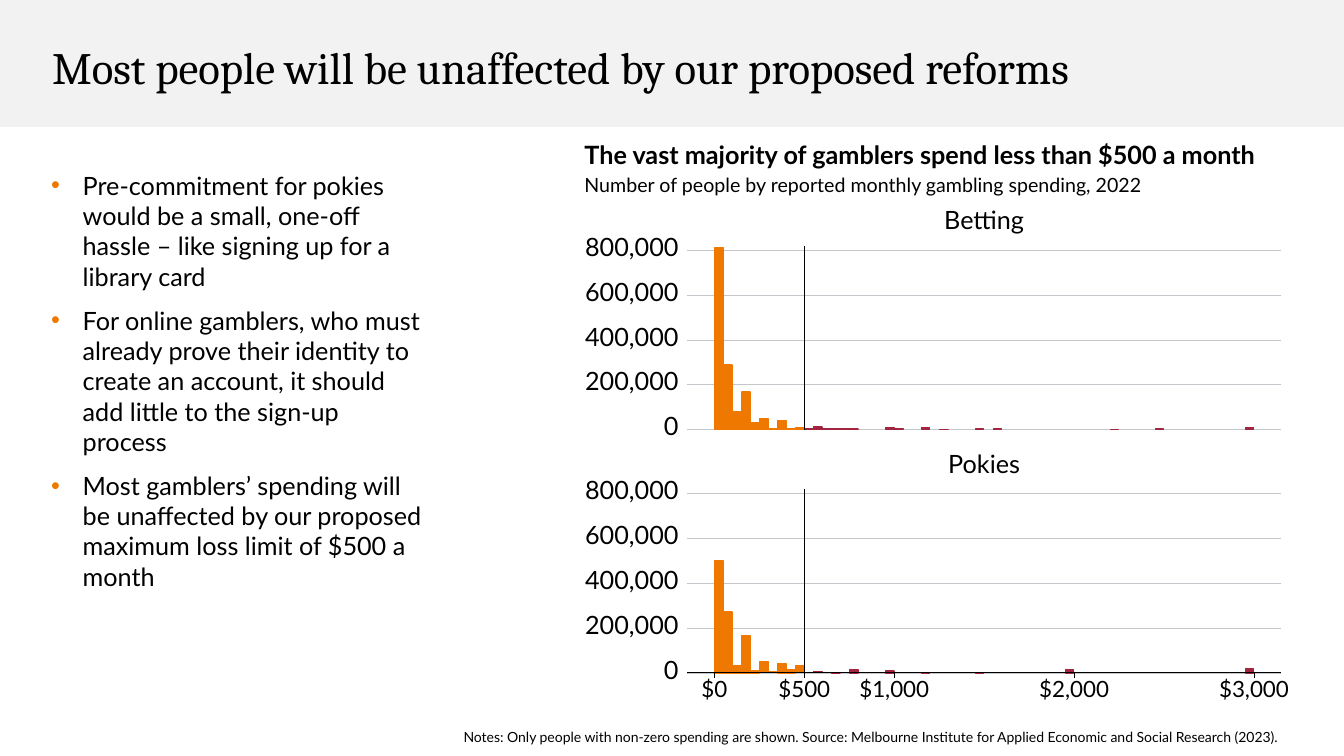
from lxml import etree
from pptx import Presentation
from pptx.dml.color import RGBColor
from pptx.enum.shapes import MSO_CONNECTOR as Connector, MSO_SHAPE as Shape
from pptx.enum.text import MSO_ANCHOR as Anchor, MSO_AUTO_SIZE as AutoSize, PP_ALIGN as Align
from pptx.oxml.ns import qn
from pptx.util import Pt

BLACK, ORANGE, RED, GRID, BAND = "000000", "EF7900", "A1253E", "C3C7CB", "F2F2F2"
rgb = RGBColor.from_string

presentation = Presentation()
presentation.slide_width, presentation.slide_height = Pt(960), Pt(540)
slide = presentation.slides.add_slide(presentation.slide_layouts[5])


def add_text(text, left, top, width, height, size=18, bold=False, align=Align.LEFT,
             anchor=Anchor.TOP, inset=(7.2, 3.6), line_spacing=None, bullet=None):
    """Add a text box with one paragraph per line of text; bullet is the bullet colour."""
    frame = slide.shapes.add_textbox(Pt(left), Pt(top), Pt(width), Pt(height)).text_frame
    frame.word_wrap = True
    frame.vertical_anchor = anchor
    frame.margin_left = frame.margin_right = Pt(inset[0])
    frame.margin_top = frame.margin_bottom = Pt(inset[1])
    frame.text = text
    for number, paragraph in enumerate(frame.paragraphs):
        paragraph.alignment = align
        if line_spacing:
            paragraph.line_spacing = line_spacing
        if bullet:
            if number:
                paragraph.space_before = Pt(10)
            properties = paragraph._p.get_or_add_pPr()
            properties.set("marL", str(Pt(22.5)))
            properties.set("indent", str(-Pt(22.5)))
            color = etree.SubElement(properties, qn("a:buClr"))
            etree.SubElement(color, qn("a:srgbClr"), val=bullet)
            etree.SubElement(properties, qn("a:buFont"), typeface="Arial")
            etree.SubElement(properties, qn("a:buChar"), char="•")
        font = paragraph.runs[0].font
        font.name, font.size, font.bold = "Lato", Pt(size), bold
        font.color.rgb = rgb(BLACK)


def add_line(x1, y1, x2, y2, width, color=BLACK):
    line = slide.shapes.add_connector(Connector.STRAIGHT, Pt(x1), Pt(y1), Pt(x2), Pt(y2))
    line.line.color.rgb = rgb(color)
    line.line.width = Pt(width)
    etree.SubElement(line.element.spPr, qn("a:effectLst"))


# Title on its grey band
title = slide.shapes.title
title.left, title.top, title.width, title.height = Pt(30), Pt(28.8), Pt(760), Pt(42.5)
title.text_frame.text = "Most people will be unaffected by our proposed reforms"
title.text_frame.auto_size = AutoSize.NONE
title.text_frame.vertical_anchor = Anchor.MIDDLE
paragraph = title.text_frame.paragraphs[0]
paragraph.alignment = Align.LEFT
paragraph.line_spacing = 0.9
paragraph.font.name, paragraph.font.size = "Cambria", Pt(32)
paragraph.font.color.rgb = rgb(BLACK)

band = slide.shapes.add_shape(Shape.RECTANGLE, 0, 0, presentation.slide_width, Pt(90.7))
band.shadow.inherit = False
band.fill.solid()
band.fill.fore_color.rgb = rgb(BAND)
band.line.fill.background()
title.element.addprevious(band.element)

add_text("Pre-commitment for pokies would be a small, one-off hassle – like signing up for a library card\n"
         "For online gamblers, who must already prove their identity to create an account, "
         "it should add little to the sign-up process\n"
         "Most gamblers’ spending will be unaffected by our proposed maximum loss limit of $500 a month",
         29.5, 118, 283.7, 329, bullet=ORANGE)
add_text("The vast majority of gamblers spend less than $500 a month", 410.4, 95.8, 545, 28.8, bold=True)
add_text("Number of people by reported monthly gambling spending, 2022", 410.4, 120.2, 545, 24.5, size=14)

# Histograms: people in thousands for each $50 bin, with three empty bins on either side
BINS, PADDING, LIMIT_BIN = 60, 3, 10
PLOT_LEFT, PLOT_WIDTH, PLOT_HEIGHT = 491, 424, 131
POINTS_PER_THOUSAND = 0.16
BIN_WIDTH = PLOT_WIDTH / (BINS + 2 * PADDING)
ZERO_X = PLOT_LEFT + PADDING * BIN_WIDTH
LIMIT_X = ZERO_X + LIMIT_BIN * BIN_WIDTH
label_format = dict(anchor=Anchor.MIDDLE, inset=(0, 0), line_spacing=Pt(18))

betting = {0: 813, 1: 287, 2: 81, 3: 167, 4: 32, 5: 50, 6: 5, 7: 41, 8: 5, 9: 9,
           10: 5, 11: 10, 12: 2, 13: 4, 14: 2, 15: 2, 19: 8, 20: 5, 23: 9, 25: 1,
           29: 2, 31: 2, 44: 1, 49: 2, 59: 8}
pokies = {0: 502, 1: 271, 2: 32, 3: 167, 4: 9, 5: 50, 6: 5, 7: 41, 8: 14, 9: 33,
          11: 5, 13: 1, 15: 14, 19: 9, 23: 1, 29: 2, 39: 14, 59: 18}

for name, counts, baseline in (("Betting", betting, 306.8), ("Pokies", pokies, 480.6)):
    for thousands in range(0, 801, 200):
        y = baseline - thousands * POINTS_PER_THOUSAND
        add_line(PLOT_LEFT, y, PLOT_LEFT + PLOT_WIDTH, y, 0.37, GRID)
        add_text(f"{thousands * 1000:,}", 414, y - 10, 70.6, 18, align=Align.RIGHT, **label_format)

    for bin_number, thousands in counts.items():
        height = thousands * POINTS_PER_THOUSAND
        bar = slide.shapes.add_shape(
            Shape.RECTANGLE, Pt(ZERO_X + bin_number * BIN_WIDTH + 0.3), Pt(baseline - height),
            Pt(BIN_WIDTH - 0.6), Pt(height))
        color = rgb(ORANGE if bin_number < LIMIT_BIN else RED)
        bar.shadow.inherit = False
        bar.fill.solid()
        bar.fill.fore_color.rgb = color
        bar.line.color.rgb = color
        bar.line.width = Pt(1.07)

    add_line(LIMIT_X, baseline, LIMIT_X, baseline - PLOT_HEIGHT, 1.07)
    add_text(name, PLOT_LEFT, baseline - 157, PLOT_WIDTH, 18, align=Align.CENTER, **label_format)

# Dollar axis under the lower histogram
add_line(PLOT_LEFT, baseline, PLOT_LEFT + PLOT_WIDTH, baseline, 0.75)
for dollars in (0, 500, 1000, 2000, 3000):
    x = ZERO_X + dollars / 50 * BIN_WIDTH
    add_line(x, baseline, x, baseline + 4, 0.56)
    add_text(f"${dollars:,}", x - 30, baseline + 3, 60, 18, size=16, align=Align.CENTER, **label_format)

add_text("Notes: Only people with non-zero spending are shown. Source: Melbourne Institute for "
         "Applied Economic and Social Research (2023).",
         324, 510, 636, 30, size=10, anchor=Anchor.MIDDLE, line_spacing=1.2)

presentation.save("out.pptx")
